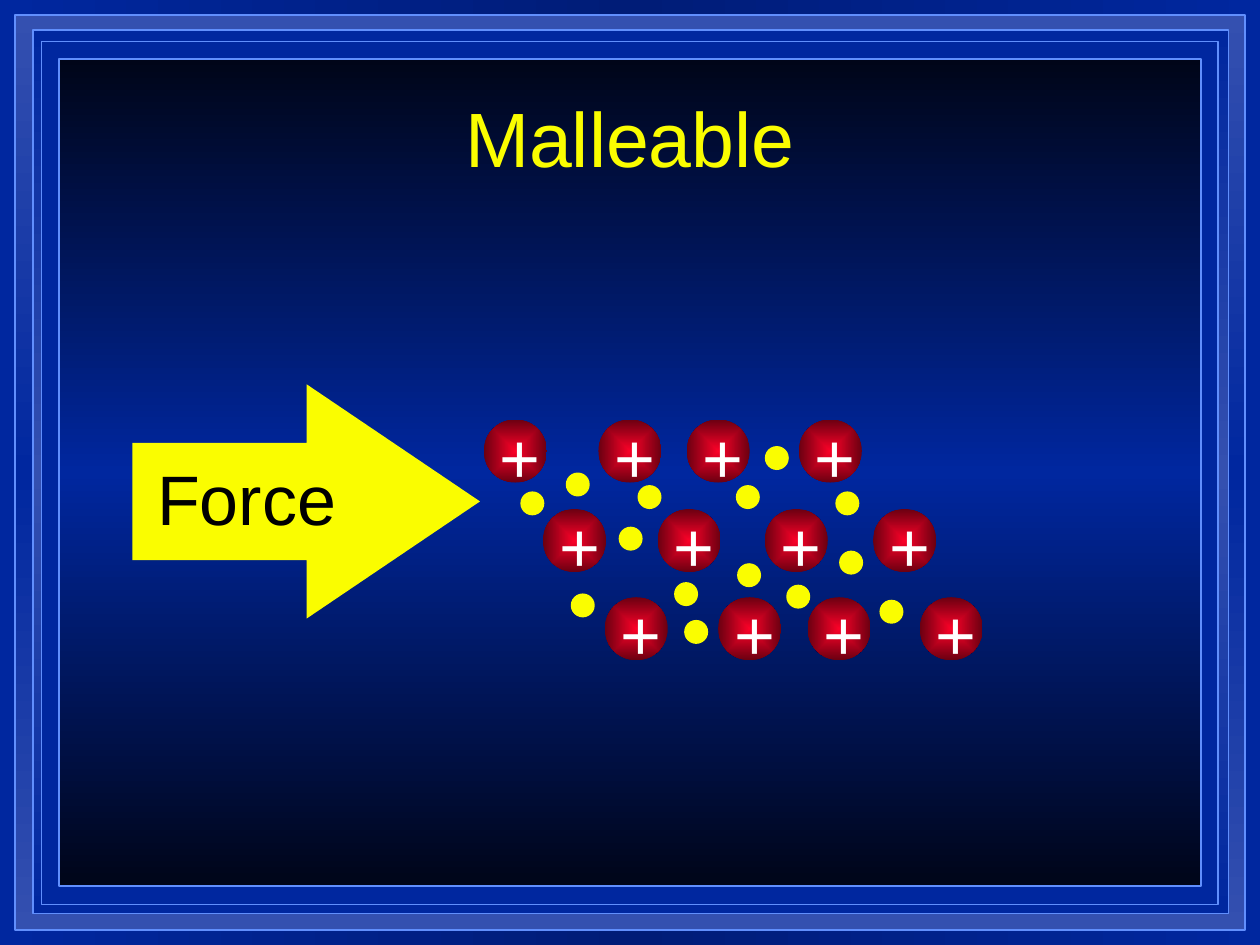
from lxml.etree import SubElement
from pptx import Presentation
from pptx.dml.color import RGBColor
from pptx.enum.shapes import MSO_SHAPE
from pptx.enum.text import MSO_ANCHOR, PP_ALIGN
from pptx.oxml.ns import qn
from pptx.util import Inches, Pt

BLUE, YELLOW, EDGE = "00279F", "FAFD00", "618FFD"
HAZE, NIGHT = "3450B0", "000519"
FRAMES = [
    (0.12, 0.12, 9.76, 7.26, [HAZE, BLUE, HAZE]),
    (0.26, 0.24, 9.49, 7.01, [BLUE, HAZE, BLUE]),
    (0.33, 0.33, 9.34, 6.85, [BLUE]),
    (0.47, 0.47, 9.06, 6.56, [NIGHT, BLUE, NIGHT]),
]
ION_ROWS = [
    (3.33, [3.84, 4.75, 5.45, 6.34]),
    (4.04, [4.31, 5.22, 6.07, 6.93]),
    (4.74, [4.8, 5.7, 6.41, 7.3]),
]
ELECTRONS = [
    (5.84, 3.85), (4.49, 3.75), (4.53, 4.71), (4.91, 4.18), (5.06, 3.85),
    (5.43, 4.92), (6.98, 4.76), (5.85, 4.47), (6.24, 4.64), (6.66, 4.37),
    (6.63, 3.9), (6.07, 3.54), (4.13, 3.9), (5.35, 4.62),
]


def rgb(value):
    """Return the colour for a hex string."""
    return RGBColor.from_string(value)


def set_gradient(fill, element, colors, angle=90, radial=False):
    """Fill with evenly spaced colour stops, linear or from the centre."""
    fill.gradient()
    grad = element.find(".//" + qn("a:gradFill"))
    for child in list(grad):
        grad.remove(child)
    stops = SubElement(grad, qn("a:gsLst"))
    for i, color in enumerate(colors):
        pos = str(round(100000 * i / (len(colors) - 1)))
        stop = SubElement(stops, qn("a:gs"), pos=pos)
        SubElement(stop, qn("a:srgbClr"), val=color)
    if radial:
        way = SubElement(grad, qn("a:path"), path="shape")
        SubElement(way, qn("a:fillToRect"), l="50000", t="50000", r="50000", b="50000")
    else:
        SubElement(grad, qn("a:lin"), ang=str(angle * 60000), scaled="0")


def add_shape(shapes, kind, x, y, w, h, colors, line=None, radial=False):
    """Add a preset shape with one flat colour or a gradient."""
    sp = shapes.add_shape(kind, Inches(x), Inches(y), Inches(w), Inches(h))
    sp.shadow.inherit = False
    if len(colors) > 1:
        set_gradient(sp.fill, sp._element, colors, radial=radial)
    else:
        sp.fill.solid()
        sp.fill.fore_color.rgb = rgb(colors[0])
    if line:
        sp.line.color.rgb = rgb(line)
        sp.line.width = Pt(1)
    else:
        sp.line.fill.background()
    return sp


def write(tf, text, size, color, align=PP_ALIGN.LEFT):
    """Write one formatted paragraph into a text frame."""
    tf.word_wrap = True
    p = tf.paragraphs[0]
    p.alignment = align
    r = p.add_run()
    r.text = text
    r.font.name = "Arial"
    r.font.size = Pt(size)
    r.font.color.rgb = rgb(color)
    return p


def add_label(shapes, text, x, y, w, color):
    """Add a 40 point label with half a line of space before it."""
    sp = shapes.add_textbox(Inches(x), Inches(y), Inches(w), Inches(0.77))
    p = write(sp.text_frame, text, 40, color)
    before = SubElement(p._p.get_or_add_pPr(), qn("a:spcBef"))
    SubElement(before, qn("a:spcPct"), val="50000")


def add_ion(shapes, x, y):
    """Add a red positive ion."""
    add_shape(shapes, MSO_SHAPE.OVAL, x, y, 0.5, 0.5, ["FC0128", "6B0011"], radial=True)
    add_label(shapes, "+", x + 0.03, y - 0.1, 0.33, "FFFFFF")


def add_title(s, text):
    """Place the title above the frames."""
    sp = s.shapes.title
    s.shapes._spTree.append(sp._element)
    sp.left, sp.top = Inches(0.75), Inches(0.67)
    sp.width, sp.height = Inches(8.5), Inches(0.83)
    sp.text_frame.vertical_anchor = MSO_ANCHOR.BOTTOM
    write(sp.text_frame, text, 44, YELLOW, align=PP_ALIGN.CENTER)


def main():
    """Build the slide."""
    prs = Presentation()
    prs.slide_width, prs.slide_height = Inches(10), Inches(7.5)
    s = prs.slides.add_slide(prs.slide_layouts[5])
    set_gradient(s.background.fill, s.element, [BLUE, "001C77", BLUE], angle=0)
    for x, y, w, h, colors in FRAMES:
        add_shape(s.shapes, MSO_SHAPE.RECTANGLE, x, y, w, h, colors, line=EDGE)
    add_title(s, "Malleable")

    lattice = s.shapes.add_group_shape().shapes
    for y, columns in ION_ROWS:
        for x in columns:
            add_ion(lattice, x, y)
    for x, y in ELECTRONS:
        add_shape(lattice, MSO_SHAPE.OVAL, x, y, 0.19, 0.19, [YELLOW])

    arrow = add_shape(s.shapes, MSO_SHAPE.RIGHT_ARROW, 1.05, 3.05, 2.76, 1.86, [YELLOW])
    arrow.adjustments[0], arrow.adjustments[1] = 0.5, 0.74
    add_label(s.shapes, "Force", 1.15, 3.57, 1.76, "000000")
    prs.save("out.pptx")


if __name__ == "__main__":
    main()
